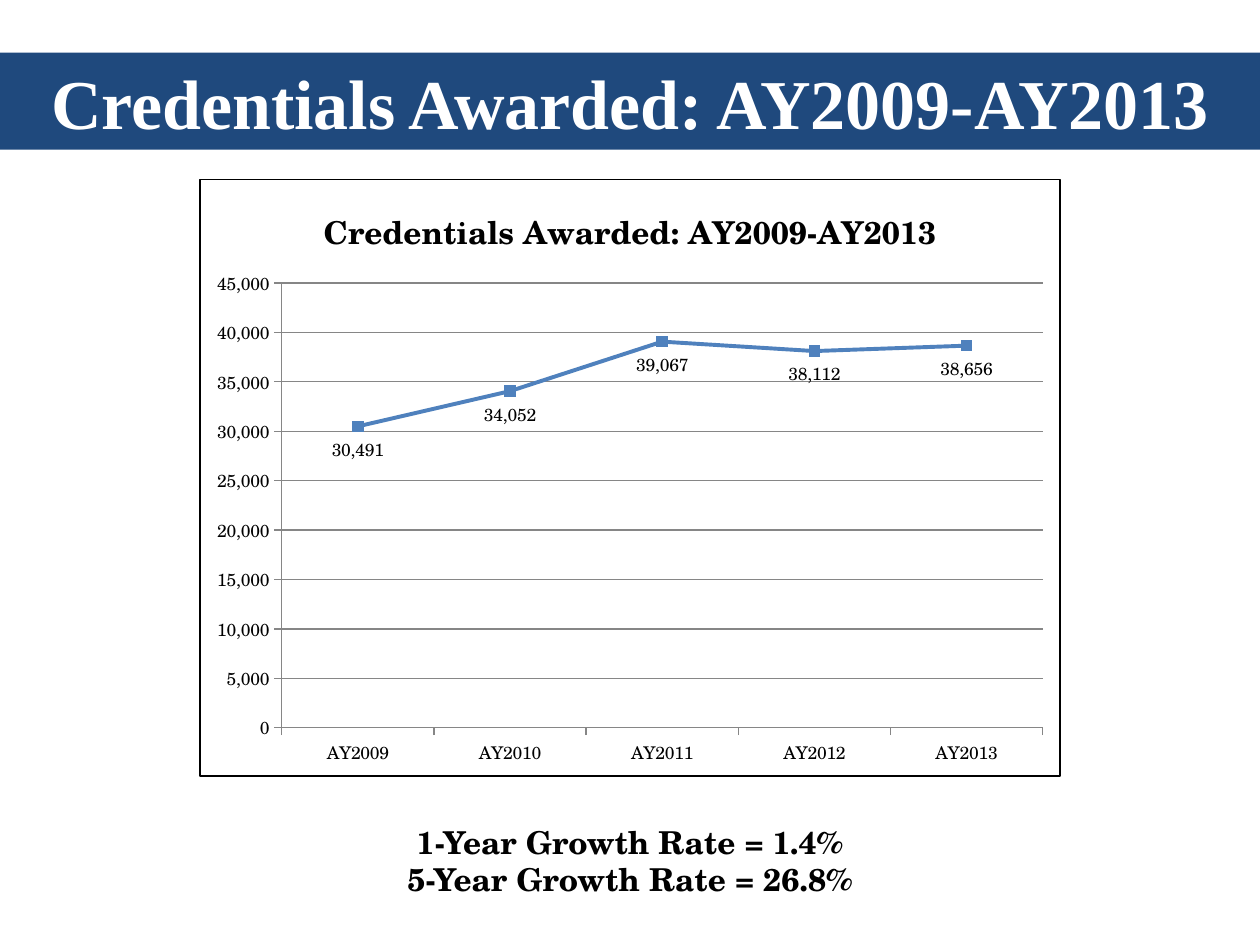
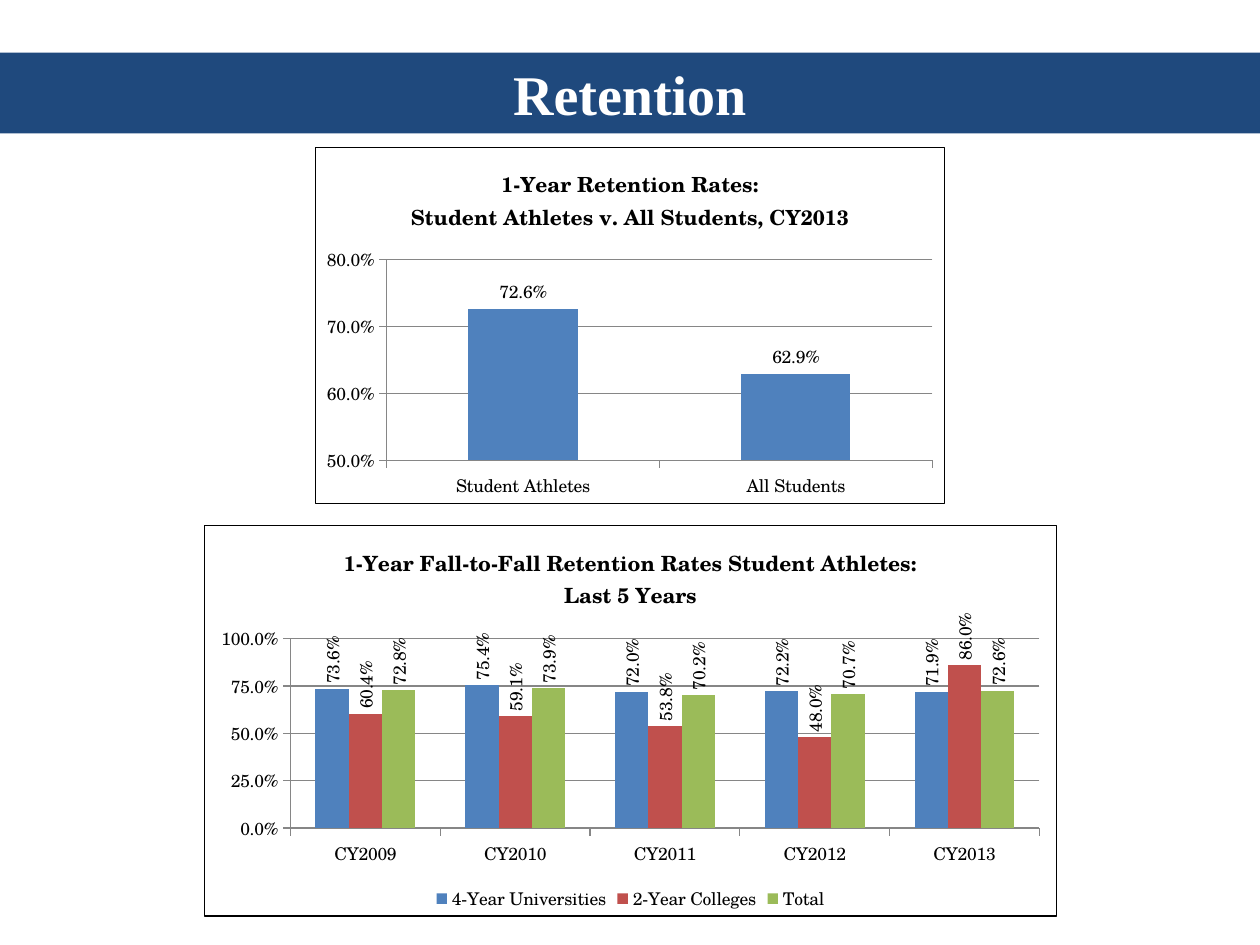
from lxml import etree
from pptx import Presentation
from pptx.chart.data import CategoryChartData
from pptx.dml.color import RGBColor
from pptx.enum.chart import (XL_CHART_TYPE as ChartType, XL_LABEL_POSITION as LabelPosition,
                             XL_LEGEND_POSITION as LegendPosition, XL_MARKER_STYLE as MarkerStyle,
                             XL_TICK_MARK as TickMark)
from pptx.enum.shapes import MSO_SHAPE as ShapeType
from pptx.enum.text import MSO_ANCHOR as Anchor, PP_ALIGN as Align
from pptx.oxml import parse_xml
from pptx.oxml.ns import nsdecls, qn
from pptx.util import Cm, Pt

# Shared style
NAVY = RGBColor(0x1F, 0x49, 0x7D)
WHITE = RGBColor(0xFF, 0xFF, 0xFF)
BLACK = RGBColor(0x00, 0x00, 0x00)
GRAY = RGBColor(0x86, 0x86, 0x86)
BLUE = RGBColor(0x4F, 0x81, 0xBD)
RED = RGBColor(0xC0, 0x50, 0x4D)
GREEN = RGBColor(0x9B, 0xBB, 0x59)
SERIES_COLORS = (BLUE, RED, GREEN)
TITLE_FONT = "Times New Roman"
BODY_FONT = "TeX Gyre Schola"
SLIDE_WIDTH, SLIDE_HEIGHT = Cm(25.4), Cm(19.05)
BAND_TOP = Cm(1.06)


def style_font(font, name, size, color, bold=False):
    font.name = name
    font.size = Pt(size)
    font.color.rgb = color
    font.bold = bold


def write_lines(text_frame, lines, name, size, color):
    """Write each line as a bold, centred paragraph."""
    for index, line in enumerate(lines):
        paragraph = text_frame.add_paragraph() if index else text_frame.paragraphs[0]
        paragraph.alignment = Align.CENTER
        run = paragraph.add_run()
        run.text = line
        style_font(run.font, name, size, color, bold=True)


def add_title_band(slide, title, height, size):
    band = slide.shapes.add_shape(ShapeType.RECTANGLE, 0, BAND_TOP, SLIDE_WIDTH, height)
    band.shadow.inherit = False
    band.fill.solid()
    band.fill.fore_color.rgb = NAVY
    band.line.fill.background()
    band.text_frame.word_wrap = True
    band.text_frame.vertical_anchor = Anchor.MIDDLE
    write_lines(band.text_frame, [title], TITLE_FONT, size, WHITE)


def add_growth_note(slide, lines):
    note = slide.shapes.add_textbox(Cm(0.85), Cm(16.46), Cm(23.7), Cm(1.8))
    note.text_frame.word_wrap = True
    write_lines(note.text_frame, lines, BODY_FONT, 18, BLACK)


def frame_chart(chart):
    """Give the chart area a white fill and a thin black border."""
    border = parse_xml(
        f'<c:spPr {nsdecls("c", "a")}><a:solidFill><a:srgbClr val="{WHITE}"/></a:solidFill>'
        f'<a:ln w="{Pt(0.75)}"><a:solidFill><a:srgbClr val="{BLACK}"/></a:solidFill></a:ln></c:spPr>')
    chart._chartSpace.find(qn("c:chart")).addnext(border)


def place_plot(chart, fractions):
    """Fix the inner plot area as x, y, w, h fractions of the chart."""
    plot_area = chart._chartSpace.find(".//" + qn("c:plotArea"))
    for old_layout in plot_area.findall(qn("c:layout")):
        plot_area.remove(old_layout)
    layout = etree.Element(qn("c:layout"))
    manual = etree.SubElement(layout, qn("c:manualLayout"))
    settings = [("layoutTarget", "inner"), ("xMode", "edge"), ("yMode", "edge")]
    settings += zip("xywh", map(str, fractions))
    for tag, value in settings:
        etree.SubElement(manual, qn("c:" + tag)).set("val", value)
    plot_area.insert(0, layout)


def style_axes(chart, number_format, scale):
    values = chart.value_axis
    for axis in (chart.category_axis, values):
        axis.major_tick_mark = TickMark.OUTSIDE
        axis.minor_tick_mark = TickMark.NONE
        axis.format.line.color.rgb = GRAY
        style_font(axis.tick_labels.font, BODY_FONT, 10, BLACK)
    values.has_major_gridlines = True
    values.major_gridlines.format.line.color.rgb = GRAY
    values.tick_labels.number_format = number_format
    values.tick_labels.number_format_is_linked = False
    values.minimum_scale, values.maximum_scale, values.major_unit = scale


def label_series(series, number_format, position, upright):
    labels = series.data_labels
    labels.show_value = True
    labels.number_format = number_format
    labels.number_format_is_linked = False
    labels.position = position
    style_font(labels.font, BODY_FONT, 10, BLACK)
    if upright:
        body = labels._element.find(qn("c:txPr")).find(qn("a:bodyPr"))
        body.set("rot", "-5400000")
        body.set("vert", "horz")


def style_line(series, color):
    series.smooth = False
    series.format.line.color.rgb = color
    series.format.line.width = Pt(2.25)
    series.marker.style = MarkerStyle.SQUARE
    series.marker.size = 6
    series.marker.format.fill.solid()
    series.marker.format.fill.fore_color.rgb = color
    series.marker.format.line.color.rgb = color


def style_columns(series, color):
    series.invert_if_negative = False
    series.format.fill.solid()
    series.format.fill.fore_color.rgb = color


def add_framed_chart(slide, chart_type, box, title_lines, title_size, categories, series_values,
                     number_format, scale, plot_fractions, legend=False, upright_labels=False):
    data = CategoryChartData(number_format=number_format)
    data.categories = categories
    for name, values in series_values.items():
        data.add_series(name, values)
    chart = slide.shapes.add_chart(chart_type, *map(Cm, box), data).chart
    style_font(chart.font, BODY_FONT, 10, BLACK)
    chart.has_title = True
    write_lines(chart.chart_title.text_frame, title_lines, BODY_FONT, title_size, BLACK)
    chart.has_legend = legend
    if legend:
        chart.legend.position = LegendPosition.BOTTOM
        chart.legend.include_in_layout = False
        style_font(chart.legend.font, BODY_FONT, 10, BLACK)

    # Series and their labels
    is_line = chart_type == ChartType.LINE_MARKERS
    plot = chart.plots[0]
    plot.vary_by_categories = False
    if not is_line:
        plot.gap_width = 150
        plot.overlap = 0
    style_series = style_line if is_line else style_columns
    position = LabelPosition.BELOW if is_line else LabelPosition.OUTSIDE_END
    for series, color in zip(plot.series, SERIES_COLORS):
        style_series(series, color)
        label_series(series, number_format, position, upright_labels)

    style_axes(chart, number_format, scale)
    place_plot(chart, plot_fractions)
    frame_chart(chart)


def build_credentials(slide):
    title = "Credentials Awarded: AY2009-AY2013"
    add_title_band(slide, title, Cm(1.96), 40)
    add_framed_chart(
        slide, ChartType.LINE_MARKERS, (4.02, 3.6, 17.36, 12.06), [title], 18,
        [f"AY{year}" for year in range(2009, 2014)],
        {"Series 1": (30491, 34052, 39067, 38112, 38656)},
        "#,##0", (0, 45000, 5000), (0.095, 0.174, 0.885, 0.745))
    add_growth_note(slide, ["1-Year Growth Rate = 1.4%", "5-Year Growth Rate = 26.8%"])


def build_retention(slide):
    add_title_band(slide, "Retention", Cm(1.63), 32)
    add_framed_chart(
        slide, ChartType.COLUMN_CLUSTERED, (6.35, 2.96, 12.7, 7.2),
        ["1-Year Retention Rates:", "Student Athletes v. All Students, CY2013"], 12,
        ["Student Athletes", "All Students"], {"Series 1": (0.726, 0.629)},
        "0.0%", (0.5, 0.8, 0.1), (0.113, 0.315, 0.868, 0.565))
    add_framed_chart(
        slide, ChartType.COLUMN_CLUSTERED, (4.11, 10.58, 17.2, 7.9),
        ["1-Year Fall-to-Fall Retention Rates Student Athletes:", "Last 5 Years"], 12,
        [f"CY{year}" for year in range(2009, 2014)],
        {"4-Year Universities": (0.736, 0.754, 0.72, 0.722, 0.719),
         "2-Year Colleges": (0.604, 0.591, 0.538, 0.48, 0.86),
         "Total": (0.728, 0.739, 0.702, 0.707, 0.726)},
        "0.0%", (0, 1, 0.25), (0.101, 0.29, 0.879, 0.485),
        legend=True, upright_labels=True)


def main():
    presentation = Presentation()
    presentation.slide_width, presentation.slide_height = SLIDE_WIDTH, SLIDE_HEIGHT
    blank = presentation.slide_layouts[6]
    for build in (build_credentials, build_retention):
        build(presentation.slides.add_slide(blank))
    presentation.save("out.pptx")


if __name__ == "__main__":
    main()
